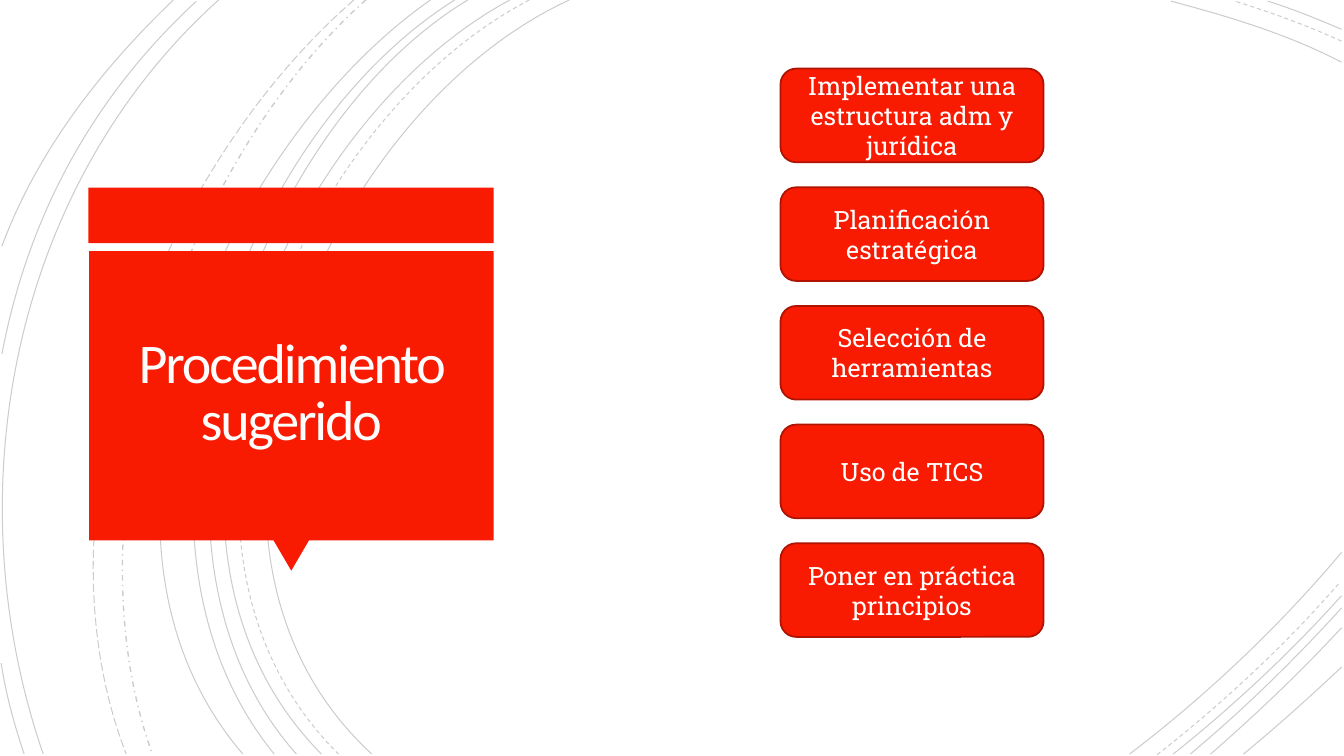
from lxml.etree import SubElement
from pptx import Presentation
from pptx.dml.color import RGBColor
from pptx.enum.dml import MSO_LINE
from pptx.enum.shapes import MSO_SHAPE
from pptx.enum.text import MSO_ANCHOR, PP_ALIGN
from pptx.oxml.ns import qn
from pptx.util import Cm, Pt

COLORS = {"arc": "000000", "red": "F81B02", "border": "AF1301",
          "title": "FFFEFF", "step": "FFFFFF"}
TITLE_FONT = {"name": "Calibri", "size": Pt(40)}
STEP_FONT = {"name": "Roboto Slab", "size": Pt(18)}
TITLE_FRAME = {"word_wrap": True, "vertical_anchor": MSO_ANCHOR.MIDDLE,
               "margin_left": Cm(0.64), "margin_right": Cm(0.64),
               "margin_top": Cm(0.64), "margin_bottom": Cm(0.64)}
STEP_FRAME = {"word_wrap": True, "vertical_anchor": MSO_ANCHOR.MIDDLE}

# Background arcs in cm: start, two control points, end
SOLID_ARCS = [
    ((14.35, 0), (8, 2.92), (3.63, 13.72), (9.37, 19)),
    ((33.81, 1.57), (32.46, 0.86), (30.94, 0.41), (29.51, 0.03)),
    ((28.47, 19), (30.4, 17.53), (32.23, 15.8), (33.81, 13.92)),
    ((12.85, 0), (6.86, 3.23), (2.79, 13.64), (8.1, 19)),
    ((33.81, 0.74), (33.2, 0.48), (32.59, 0.23), (31.95, 0.03)),
    ((29.57, 19), (31.06, 17.81), (32.51, 16.46), (33.81, 15.01)),
    ((11.79, 0), (6.2, 3.38), (2.79, 13.74), (7.47, 19)),
    ((30, 19), (31.34, 17.88), (32.61, 16.64), (33.81, 15.32)),
    ((11.46, 0), (5.87, 3.51), (2.46, 13.54), (6.91, 19)),
    ((30.51, 19), (31.65, 18.01), (32.77, 16.94), (33.81, 15.82)),
    ((10.85, 0), (5.51, 3.73), (1.35, 13.44), (6.12, 19)),
    ((31.34, 19), (32.18, 18.31), (32.99, 17.58), (33.81, 16.81)),
    ((5.51, 0), (0.28, 4.7), (-1.17, 12.45), (1.09, 19)),
    ((4.95, 0.03), (2.34, 2.44), (0.71, 5.44), (0.05, 8.92)),
    ((0.03, 16.71), (0.15, 17.5), (0.36, 18.26), (0.61, 19)),
    ((4.37, 0), (2.54, 1.75), (0.94, 3.81), (0.05, 6.2)),
]
DASHED_ARCS = [
    ((13.34, 0), (7.24, 3.18), (3.12, 13.64), (8.53, 19)),
    ((33.81, 1.04), (32.94, 0.64), (32, 0.3), (31.12, 0.03)),
    ((29.16, 19.02), (30.81, 17.73), (32.39, 16.26), (33.78, 14.66)),
]
DASH_DOT_ARC = ((9.22, 0), (4.47, 4.22), (1.65, 12.93), (3.84, 19))
LONG_DASH_ARC = ((8.92, 0), (3.99, 4.29), (0.74, 12.67), (3.18, 19))

STEPS = ["Implementar una estructura adm y jurídica", "Planificación estratégica",
         "Selección de herramientas", "Uso de TICS", "Poner en práctica principios"]
STEP_TOP, STEP_PITCH = 1.73, 2.99


def apply_format(target, values):
    for name, value in values.items():
        setattr(target, name, value)


class Deck:
    def __init__(self):
        self.presentation = Presentation()
        self.presentation.slide_width = Cm(33.87)
        self.presentation.slide_height = Cm(19.05)
        self.slide = self.presentation.slides.add_slide(self.presentation.slide_layouts[6])

    def color(self, name):
        return RGBColor.from_string(COLORS[name])

    def arc(self, points, dash=MSO_LINE.SOLID, width=0.75):
        start, *rest = [(Cm(x), Cm(y)) for x, y in points]
        builder = self.slide.shapes.build_freeform(*start)
        builder.add_line_segments(rest, close=False)
        arc = builder.convert_to_shape()
        # Turn the three segments into one cubic curve
        outline = arc._element.find(".//" + qn("a:path"))
        segments = outline.findall(qn("a:lnTo"))
        curve = SubElement(outline, qn("a:cubicBezTo"))
        for segment in segments:
            curve.append(segment[0])
            outline.remove(segment)
        arc.shadow.inherit = False
        arc.fill.background()
        arc.line.color.rgb = self.color("arc")
        apply_format(arc.line, {"width": Pt(width), "dash_style": dash})
        ink = arc._element.spPr.find(qn("a:ln")).find(".//" + qn("a:srgbClr"))
        SubElement(ink, qn("a:alpha")).set("val", "20000")

    def block(self, kind, left, top, width, height, border=None):
        block = self.slide.shapes.add_shape(kind, Cm(left), Cm(top), Cm(width), Cm(height))
        block.shadow.inherit = False
        block.fill.solid()
        block.fill.fore_color.rgb = self.color("red")
        if border:
            block.line.color.rgb = self.color(border)
            block.line.width = Pt(1.25)
        else:
            block.line.fill.background()
        return block

    def label(self, frame, text, frame_format, font_format, color):
        apply_format(frame, frame_format)
        paragraph = frame.paragraphs[0]
        paragraph.alignment = PP_ALIGN.CENTER
        run = paragraph.add_run()
        run.text = text
        apply_format(run.font, font_format)
        run.font.color.rgb = self.color(color)
        return paragraph, run

    def title(self, text, left, top, width, height):
        title = self.slide.shapes.add_textbox(Cm(left), Cm(top), Cm(width), Cm(height))
        paragraph, run = self.label(title.text_frame, text, TITLE_FRAME, TITLE_FONT, "title")
        paragraph.line_spacing = 0.85
        run._r.get_or_add_rPr().set("spc", "-150")

    def step(self, text, left, top, width, height):
        step = self.block(MSO_SHAPE.ROUNDED_RECTANGLE, left, top, width, height, "border")
        self.label(step.text_frame, text, STEP_FRAME, STEP_FONT, "step")


def main():
    deck = Deck()

    # Background arcs
    for points in SOLID_ARCS:
        deck.arc(points)
    for points in DASHED_ARCS:
        deck.arc(points, MSO_LINE.DASH)
    deck.arc(DASH_DOT_ARC, MSO_LINE.DASH_DOT, 1)
    deck.arc(LONG_DASH_ARC, MSO_LINE.LONG_DASH)

    # Title panel with its pointer
    deck.block(MSO_SHAPE.RECTANGLE, 2.23, 4.73, 10.21, 1.4)
    pointer = deck.block(MSO_SHAPE.ISOSCELES_TRIANGLE, 6.89, 13.61, 0.9, 0.77)
    pointer.rotation = 180
    deck.block(MSO_SHAPE.RECTANGLE, 2.25, 6.33, 10.19, 7.29)
    deck.title("Procedimiento sugerido", 2.47, 6.52, 9.74, 6.84)

    # Procedure steps
    for index, text in enumerate(STEPS):
        deck.step(text, 19.67, STEP_TOP + index * STEP_PITCH, 6.63, 2.36)

    deck.presentation.save("out.pptx")


if __name__ == "__main__":
    main()
